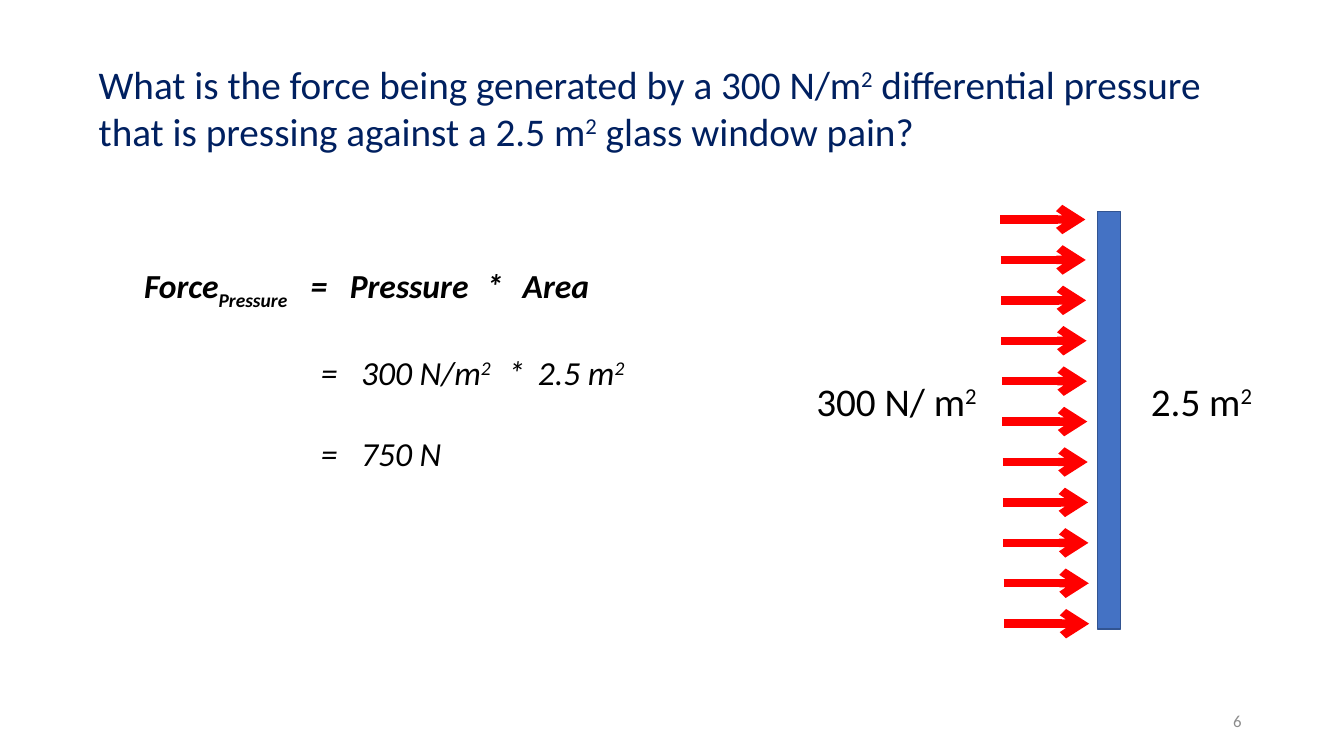
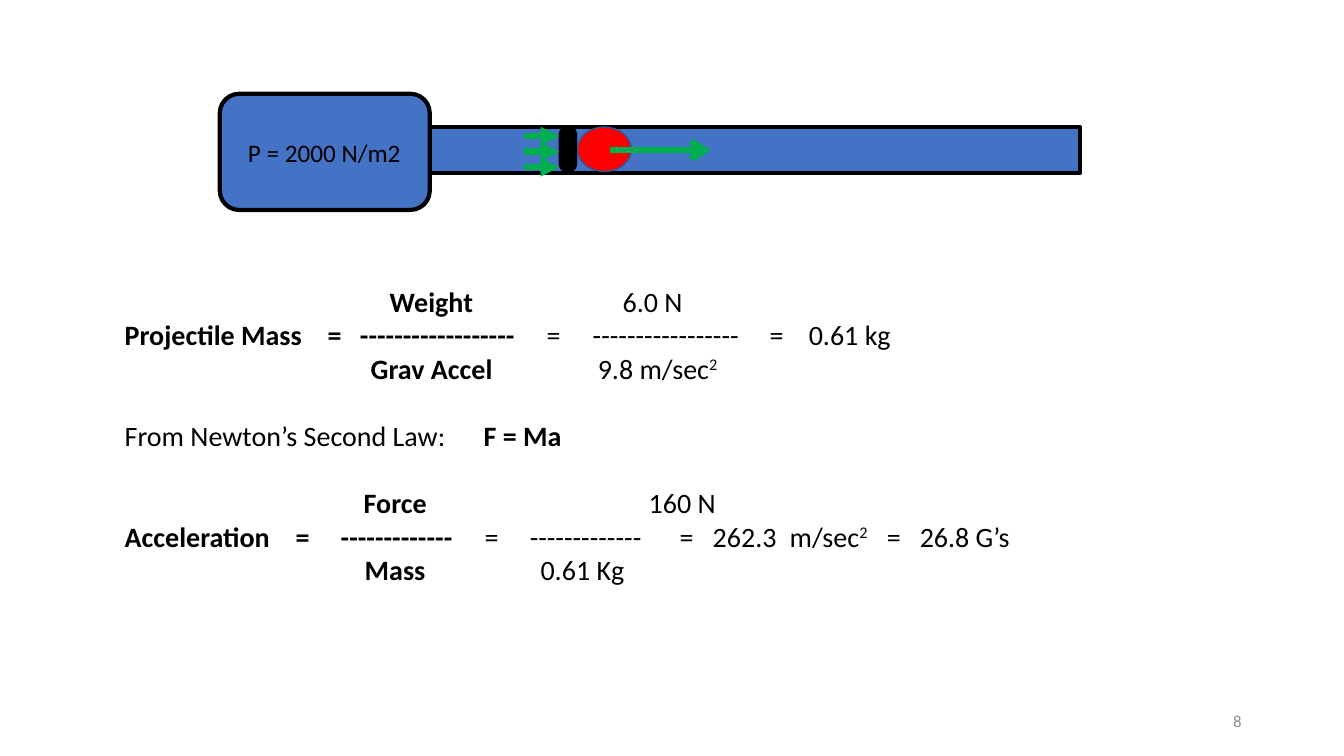
from lxml.etree import SubElement
from pptx import Presentation
from pptx.dml.color import RGBColor
from pptx.enum.shapes import MSO_CONNECTOR, MSO_SHAPE
from pptx.enum.text import MSO_ANCHOR, PP_ALIGN
from pptx.oxml.ns import qn
from pptx.util import Pt

FONT = "Calibri"
NAVY, BLACK, GRAY = "002060", "000000", "8C8C8C"
BLUE, BLUE_EDGE, RED, GREEN = "4472C4", "325491", "FF0000", "00B050"
BOLD = {"bold": True}
SQUARED = ("2", {"baseline": 30000})


def color(hex_string):
    """Turn a hex string into a color."""
    return RGBColor.from_string(hex_string)


def add_text(slide, box, paragraphs, size=20, ink=BLACK, bold=False, italic=False,
             align=PP_ALIGN.LEFT, anchor=MSO_ANCHOR.TOP):
    """Add a text box from paragraphs of (runs, tab stops, space before)."""
    frame = slide.shapes.add_textbox(*map(Pt, box)).text_frame
    frame.word_wrap = True
    frame.vertical_anchor = anchor
    for index, (runs, stops, space) in enumerate(paragraphs):
        paragraph = frame.paragraphs[0] if index == 0 else frame.add_paragraph()
        paragraph.alignment = align
        paragraph.space_before = Pt(space)
        if stops:
            tab_list = SubElement(paragraph._p.get_or_add_pPr(), qn("a:tabLst"))
            for stop in stops:
                SubElement(tab_list, qn("a:tab"), pos=str(Pt(stop)), algn="l")
        for item in runs:
            content, style = (item, {}) if isinstance(item, str) else item
            run = paragraph.add_run()
            run.text = content
            font = run.font
            font.name, font.size = FONT, Pt(size)
            font.color.rgb = color(ink)
            font.bold = style.get("bold", bold)
            font.italic = italic
            if "baseline" in style:
                font._element.set("baseline", str(style["baseline"]))


def add_line_of_text(slide, box, *runs, **text_format):
    """Add a text box that holds a single paragraph."""
    add_text(slide, box, [(runs, (), 0)], **text_format)


def add_block(slide, kind, box, fill, edge, width):
    """Add a filled preset shape with an outline."""
    shape = slide.shapes.add_shape(kind, *map(Pt, box))
    shape.shadow.inherit = False
    shape.fill.solid()
    shape.fill.fore_color.rgb = color(fill)
    shape.line.color.rgb = color(edge)
    shape.line.width = Pt(width)
    return shape


def add_arrow(slide, left, top, length, ink, width, head):
    """Add a horizontal arrow that points right."""
    arrow = slide.shapes.add_connector(
        MSO_CONNECTOR.STRAIGHT, Pt(left), Pt(top), Pt(left + length), Pt(top))
    arrow.line.color.rgb = color(ink)
    arrow.line.width = Pt(width)
    SubElement(arrow.line._get_or_add_ln(), qn("a:tailEnd"), type=head)
    SubElement(arrow._element.spPr, qn("a:effectLst"))


def add_slide(presentation, number):
    """Add a blank slide with its number in the footer."""
    slide = presentation.slides.add_slide(presentation.slide_layouts[6])
    add_line_of_text(slide, (678, 500.5, 216, 28.75), number, size=12, ink=GRAY,
                     align=PP_ALIGN.RIGHT, anchor=MSO_ANCHOR.MIDDLE)
    return slide


def add_window(slide, left, top):
    """Draw the window pane, the pressure arrows and their labels."""
    add_block(slide, MSO_SHAPE.RECTANGLE, (left + 208, top, 16.5, 298), BLUE, BLUE_EDGE, 1)
    for index in range(11):
        add_arrow(slide, left + 138.5 + 0.27 * index, top + 5.6 + 28.87 * index,
                  60.8, RED, 6, "arrow")
    label_top = top + 114.5
    add_line_of_text(slide, (left, label_top, 141, 41), "300 N/ m", SQUARED, size=28)
    add_line_of_text(slide, (left + 239, label_top, 102, 41), "2.5 m", SQUARED, size=28)


def add_launcher(slide, left, top):
    """Draw the pressure tank, the barrel and the projectile."""
    barrel_top = top + 23.8
    add_block(slide, MSO_SHAPE.ROUNDED_RECTANGLE, (left, top, 150, 83), BLUE, BLACK, 3)
    add_block(slide, MSO_SHAPE.RECTANGLE, (left + 150, barrel_top, 464.4, 33), BLUE, BLACK, 3)
    piston = add_block(slide, MSO_SHAPE.ROUNDED_RECTANGLE,
                       (left + 242.6, barrel_top, 12.2, 31.7), BLACK, BLACK, 1)
    piston.adjustments[0] = 0.42
    add_block(slide, MSO_SHAPE.OVAL, (left + 255.6, barrel_top, 38.2, 31.7),
              RED, BLUE_EDGE, 1)
    add_line_of_text(slide, (left + 13, top + 27.4, 132, 29), "P = 2000 N/m2", size=18)
    add_arrow(slide, left + 278.6, top + 40.3, 72, GREEN, 4.5, "arrow")
    for index in range(3):
        add_arrow(slide, left + 217.4, top + 30.2 + 11.1 * index, 25.2,
                  GREEN, 4.5, "triangle")


def build_force_slide(presentation):
    """Build the slide on the force against a window."""
    slide = add_slide(presentation, "6")
    add_line_of_text(
        slide, (63.4, 39.6, 831, 75), "What is the force being generated by a 300 N/m", SQUARED,
        " differential pressure that is pressing against a 2.5 m", SQUARED,
        " glass window pain?", size=28, ink=NAVY)
    add_window(slide, 576, 151.2)
    result_stops = (126.4, 155, 260, 281.3)
    add_text(slide, (95.8, 185.8, 421, 181), [
        ((("Force", BOLD), ("Pressure", {"baseline": -25000, "bold": True}),
          ("\t=\tPressure\t*\tArea", BOLD)), (119, 147, 244.5, 270.5), 0),
        (("\t=\t300 N/m", SQUARED, "\t*\t2.5 m", SQUARED), result_stops, 29),
        (("\t=\t750 N",), result_stops, 29),
    ], size=24, italic=True)


def build_acceleration_slide(presentation):
    """Build the slide on the acceleration of a projectile."""
    slide = add_slide(presentation, "8")
    add_launcher(slide, 157, 67)
    gap = 24
    add_text(slide, (82, 199.4, 796, 271), [
        ((("\tWeight", BOLD), "\t6.0 N"), (189.3, 355.7), 0),
        ((("Projectile Mass\t=\t------------------", BOLD),
          "\t=\t-----------------\t=\t0.61 kg"),
         (145, 168, 301.4, 334.3, 460.7, 488.6), 0),
        ((("\tGrav Accel", BOLD), "\t9.8 m/sec", SQUARED), (175.7, 337.9), 0),
        (("From Newton’s Second Law:", ("\tF = Ma", BOLD)), (256.4,), gap),
        ((("\tForce", BOLD), "\t160 N"), (170.7, 374.3), gap),
        ((("Acceleration\t=\t-------------", BOLD),
          "\t=\t-------------\t=\t262.3\tm/sec", SQUARED, "\t=\t26.8 G’s"),
         (122, 154.3, 257, 289.3, 396.4, 420, 475, 544.3, 567.9), 0),
        ((("\tMass", BOLD), "\t0.61 Kg"), (171.4, 297), 0),
    ])


def main():
    """Build and save the presentation."""
    presentation = Presentation()
    presentation.slide_width, presentation.slide_height = Pt(960), Pt(540)
    build_force_slide(presentation)
    build_acceleration_slide(presentation)
    presentation.save("out.pptx")


if __name__ == "__main__":
    main()
